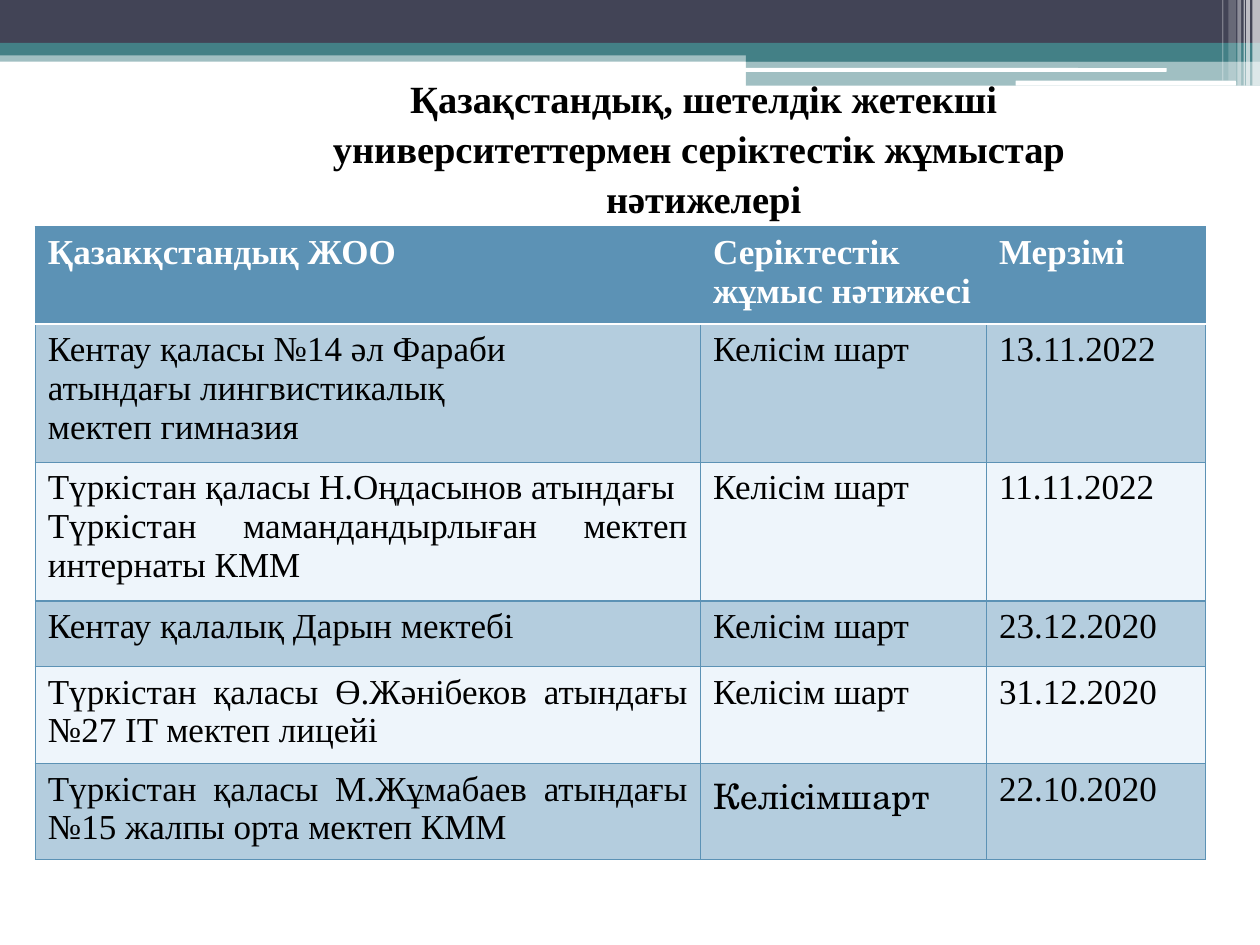
from dataclasses import dataclass
from typing import NamedTuple

from lxml import etree
from pptx import Presentation
from pptx.dml.color import RGBColor
from pptx.enum.shapes import MSO_SHAPE
from pptx.enum.text import MSO_AUTO_SIZE, PP_ALIGN
from pptx.oxml.ns import qn
from pptx.util import Inches, Pt

RECT, ROUND = MSO_SHAPE.RECTANGLE, MSO_SHAPE.ROUNDED_RECTANGLE
LEFT, CENTER, JUSTIFY = PP_ALIGN.LEFT, PP_ALIGN.CENTER, PP_ALIGN.JUSTIFY
NO_AUTOFIT = MSO_AUTO_SIZE.NONE


@dataclass(frozen=True)
class Theme:
    dark: str = "424456"
    teal: str = "438086"
    white: str = "FFFFFF"
    black: str = "000000"
    blue: str = "5C92B5"
    band: str = "B4CDDE"
    pale: str = "EEF5FB"
    font: str = "Times New Roman"
    alt_font: str = "TeX Gyre Schola"
    title_size: int = 22
    cell_size: int = 20
    grid: float = 0.75
    rule: float = 1.5


class Bar(NamedTuple):
    left: float
    top: float
    width: float
    height: float
    color: str
    alpha: int = 100
    kind: MSO_SHAPE = RECT


class Row(NamedTuple):
    height: float
    cells: tuple[str, str, str]


T = Theme()
BARS = [
    Bar(0, 0.4, 10, 0.09, T.teal, 50),
    Bar(0, 0, 10, 0.34, T.dark),
    Bar(0, 0.34, 10, 0.1, T.teal),
    Bar(5.92, 0.39, 4.08, 0.1, T.teal),
    Bar(5.92, 0.48, 4.08, 0.2, T.teal, 50),
    Bar(5.91, 0.54, 3.35, 0.03, T.white, kind=ROUND),
    Bar(8.06, 0.64, 1.75, 0.04, T.white, kind=ROUND),
    Bar(9.94, 0, 0.06, 0.68, T.white, 65),
    Bar(9.89, 0, 0.03, 0.68, T.white, 65),
    Bar(9.87, 0, 0.01, 0.68, T.white, 60),
    Bar(9.82, 0, 0.03, 0.68, T.white, 40),
    Bar(9.75, 0, 0.06, 0.64, T.white, 20),
    Bar(9.7, 0, 0.01, 0.64, T.white, 30),
]
TITLE = "Қазақстандық, шетелдік жетекші университеттермен серіктестік жұмыстар \nнәтижелері"
COLUMNS = (5.28, 2.27, 1.74)
ROWS = [
    Row(0.77, ("Қазакқстандық ЖОО", "Серіктестік жұмыс нәтижесі", "Мерзімі")),
    Row(1.1, ("Кентау қаласы №14 әл Фараби\nатындағы лингвистикалық\nмектеп гимназия",
              "Келісім шарт", "13.11.2022")),
    Row(1.1, ("Түркістан қаласы Н.Оңдасынов атындағы\n"
              "Түркістан мамандандырлыған мектеп интернаты КММ",
              "Келісім шарт", "11.11.2022")),
    Row(0.52, ("Кентау қалалық Дарын мектебі", "Келісім шарт", "23.12.2020")),
    Row(0.77, ("Түркістан қаласы Ө.Жәнібеков атындағы №27 IT мектеп лицейі",
               "Келісім шарт", "31.12.2020")),
    Row(0.76, ("Түркістан қаласы М.Жұмабаев атындағы №15 жалпы орта мектеп КММ",
               "Келісімшарт", "22.10.2020")),
]


def rgb(color: str) -> RGBColor:
    return RGBColor.from_string(color)


def draw_bar(s, bar: Bar) -> None:
    sp = s.shapes.add_shape(bar.kind, *map(Inches, bar[:4]))
    sp.shadow.inherit = False
    sp.line.fill.background()
    sp.fill.solid()
    sp.fill.fore_color.rgb = rgb(bar.color)
    if bar.alpha < 100:
        clr = sp.fill._xPr.find(".//" + qn("a:srgbClr"))
        etree.SubElement(clr, qn("a:alpha"), val=str(bar.alpha * 1000))


def write(tf, text: str, size: int, color: str, bold: bool, align: PP_ALIGN,
          font: str = T.font) -> None:
    tf.text = text
    for p in tf.paragraphs:
        p.alignment = align
        p.font.name, p.font.size, p.font.bold = font, Pt(size), bold
        p.font.color.rgb = rgb(color)


def draw_title(s) -> None:
    sp = s.shapes.add_textbox(*map(Inches, (2.08, 0.52, 7.01, 1.21)))
    tf = sp.text_frame
    tf.word_wrap, tf.auto_size = True, NO_AUTOFIT
    write(tf, TITLE, T.title_size, T.black, True, CENTER)
    for p in tf.paragraphs:
        p.line_spacing = 1.08


def draw_border(cell, side: str, color: str, width: float) -> None:
    tc_pr = cell._tc.get_or_add_tcPr()
    ln = etree.SubElement(tc_pr, qn(f"a:ln{side}"), w=str(Pt(width)))
    fill = etree.SubElement(ln, qn("a:solidFill"))
    etree.SubElement(fill, qn("a:srgbClr"), val=color)


def draw_cell(cell, text: str, row: int, last: bool) -> None:
    header = row == 0
    for side in "LRTB":
        under_header = (row, side) in ((0, "B"), (1, "T"))
        draw_border(cell, side, *((T.white, T.rule) if under_header else (T.blue, T.grid)))
    cell.fill.solid()
    cell.fill.fore_color.rgb = rgb(T.blue if header else T.band if row % 2 else T.pale)
    write(cell.text_frame, text, T.cell_size, T.white if header else T.black, header,
          LEFT if header else JUSTIFY, T.alt_font if last else T.font)


def draw_table(s) -> None:
    height = sum(row.height for row in ROWS)
    table = s.shapes.add_table(len(ROWS), len(COLUMNS), Inches(0.28), Inches(1.8),
                               Inches(sum(COLUMNS)), Inches(height)).table
    for column, width in zip(table.columns, COLUMNS):
        column.width = Inches(width)
    for i, row in enumerate(ROWS):
        table.rows[i].height = Inches(row.height)
        for j, text in enumerate(row.cells):
            draw_cell(table.cell(i, j), text, i, (i, j) == (len(ROWS) - 1, 1))


def main() -> None:
    """Build the partnership results slide."""
    prs = Presentation()
    prs.slide_width, prs.slide_height = Inches(10), Inches(7.5)
    s = prs.slides.add_slide(prs.slide_layouts[6])
    for bar in BARS:
        draw_bar(s, bar)
    draw_title(s)
    draw_table(s)
    prs.save("out.pptx")


if __name__ == "__main__":
    main()
